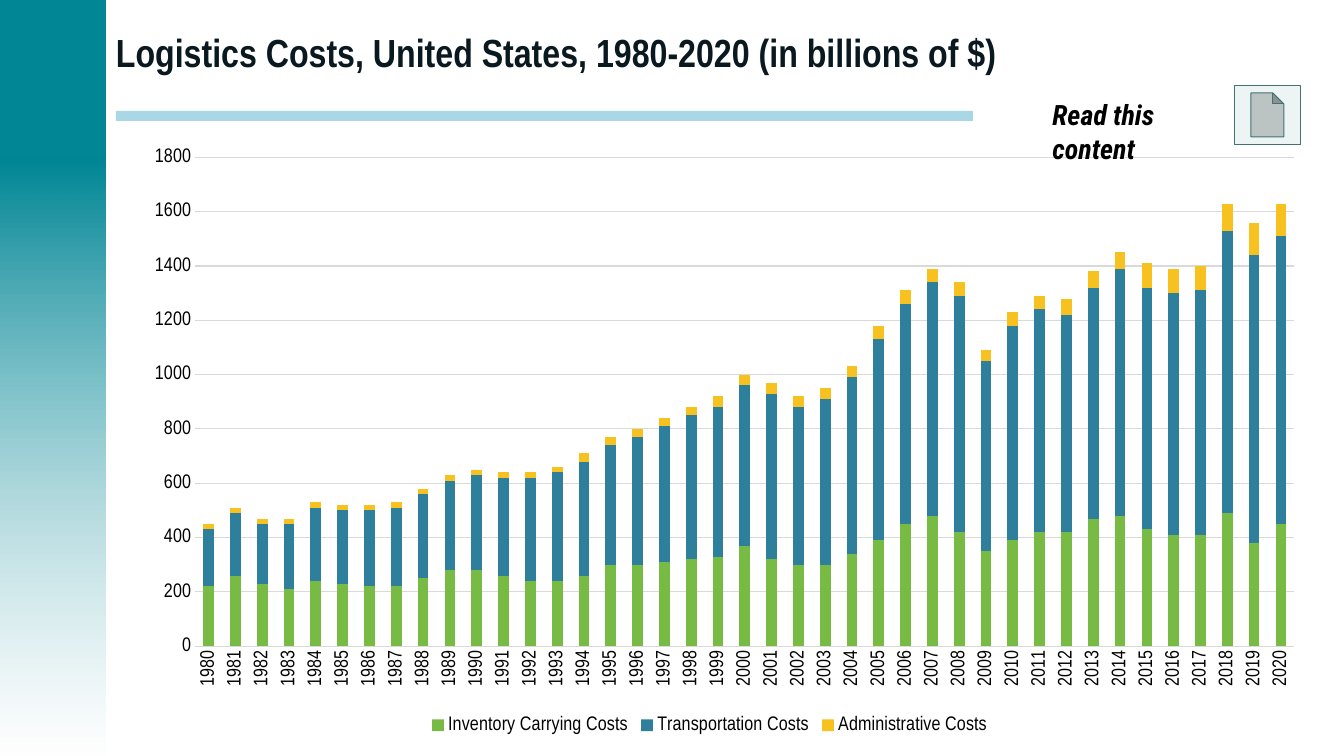
from lxml import etree
from pptx import Presentation
from pptx.chart.data import CategoryChartData as Data
from pptx.dml.color import RGBColor as Rgb
from pptx.enum.chart import XL_CHART_TYPE as Kind, XL_LEGEND_POSITION as Side, XL_TICK_MARK as Tick
from pptx.enum.shapes import MSO_SHAPE as Form
from pptx.enum.text import MSO_ANCHOR as Anchor, MSO_AUTO_SIZE as Fit, PP_ALIGN as Align
from pptx.oxml.ns import qn
from pptx.util import Inches, Pt

HUES = {
    "teal": "008695", "white": "FFFFFF", "rule": "AAD7E6", "title": "09191F",
    "black": "000000", "grid": "D9D9D9", "button": "ECF4F4", "edge": "427272",
    "stock": "78BB44", "move": "2D7F9B", "admin": "F7C120",
}
FACE = "Arial Narrow"
TITLE = "Logistics Costs, United States, 1980-2020 (in billions of $)"
NOTE = "Read this content"
YEARS = range(1980, 2021)
COSTS = [
    ("Inventory Carrying Costs", "stock", [
        220, 260, 230, 210, 240, 230, 220, 220, 250, 280, 280, 260, 240, 240,
        260, 300, 300, 310, 320, 330, 370, 320, 300, 300, 340, 390, 450, 480,
        420, 350, 390, 420, 420, 470, 480, 430, 410, 410, 490, 380, 450]),
    ("Transportation Costs", "move", [
        210, 230, 220, 240, 270, 270, 280, 290, 310, 330, 350, 360, 380, 400,
        420, 440, 470, 500, 530, 550, 590, 610, 580, 610, 650, 740, 810, 860,
        870, 700, 790, 820, 800, 850, 910, 890, 890, 900, 1040, 1060, 1060]),
    ("Administrative Costs", "admin", [
        20, 20, 20, 20, 20, 20, 20, 20, 20, 20, 20, 20, 20, 20,
        30, 30, 30, 30, 30, 40, 40, 40, 40, 40, 40, 50, 50, 50,
        50, 40, 50, 50, 60, 60, 60, 90, 90, 90, 100, 120, 120]),
]
PLOT = {"x": 0.074, "y": 0.045, "w": 0.91, "h": 0.803}


def hue(name):
    return Rgb.from_string(HUES[name])


def style(font, size, face=FACE, tint="black", bold=False, slant=False):
    font.size, font.name = Pt(size), face
    font.bold, font.italic = bold, slant
    font.color.rgb = hue(tint)


def stroke(line, tint):
    line.color.rgb = hue(tint)
    line.width = Pt(0.75)


def block(slide, box, tint, form=Form.RECTANGLE):
    shape = slide.shapes.add_shape(form, *map(Inches, box))
    shape.shadow.inherit = False
    shape.fill.solid()
    shape.fill.fore_color.rgb = hue(tint)
    shape.line.fill.background()
    return shape


def fade(shape):
    shape.fill.gradient()
    shape.fill.gradient_angle = 270
    for stop, tint, place in zip(shape.fill.gradient_stops, ("teal", "white"), (0, 1)):
        stop.color.rgb = hue(tint)
        stop.position = place
    last = list(shape.element.iter(qn("a:srgbClr")))[-1]
    etree.SubElement(last, qn("a:alpha")).set("val", "51000")


def pin(chart):
    area = chart.element.find(".//" + qn("c:plotArea"))
    old = area.find(qn("c:layout"))
    if old is not None:
        area.remove(old)
    lay = etree.Element(qn("c:layout"))
    area.insert(0, lay)
    hand = etree.SubElement(lay, qn("c:manualLayout"))
    rules = [("layoutTarget", "inner"), ("xMode", "edge"), ("yMode", "edge"), *PLOT.items()]
    for tag, val in rules:
        etree.SubElement(hand, qn("c:" + tag)).set("val", str(val))


def turn(chart):
    labels = chart.element.find(".//" + qn("c:catAx") + "/" + qn("c:txPr"))
    body = labels.find(qn("a:bodyPr"))
    body.set("rot", "-5400000")
    body.set("vert", "horz")


def draw(slide):
    data = Data()
    data.categories = [str(year) for year in YEARS]
    for name, tint, vals in COSTS:
        data.add_series(name, vals)
    box = map(Inches, (1.05, 1.29, 11.98, 6.04))
    chart = slide.shapes.add_chart(Kind.COLUMN_STACKED, *box, data).chart
    style(chart.font, 14)
    chart.has_title = False
    chart.has_legend = True
    chart.legend.position = Side.BOTTOM
    chart.legend.include_in_layout = False
    style(chart.legend.font, 14)
    plot = chart.plots[0]
    plot.gap_width, plot.overlap = 150, 100
    plot.vary_by_categories = False
    for row, (name, tint, vals) in zip(plot.series, COSTS):
        row.format.fill.solid()
        row.format.fill.fore_color.rgb = hue(tint)
    cat, val = chart.category_axis, chart.value_axis
    for axis in (cat, val):
        axis.major_tick_mark = axis.minor_tick_mark = Tick.NONE
        style(axis.tick_labels.font, 14)
    stroke(cat.format.line, "grid")
    val.format.line.fill.background()
    val.minimum_scale, val.maximum_scale, val.major_unit = 0, 1800, 200
    val.has_major_gridlines = True
    stroke(val.major_gridlines.format.line, "grid")
    pin(chart)
    turn(chart)


def main():
    deck = Presentation()
    deck.slide_width, deck.slide_height = Inches(13.33), Inches(7.5)
    slide = deck.slides.add_slide(deck.slide_layouts[5])
    block(slide, (-0.02, -0.01, 1.07, 1.58), "teal")
    fade(block(slide, (-0.02, 1.57, 1.07, 5.93), "teal"))
    block(slide, (1.15, 1.1, 8.5, 0.1), "rule")

    head = slide.shapes.title
    head.left, head.top, head.width, head.height = map(Inches, (1.05, 0.01, 11.98, 1))
    frame = head.text_frame
    frame.text = TITLE
    frame.auto_size = Fit.NONE
    frame.vertical_anchor = Anchor.MIDDLE
    frame.paragraphs[0].alignment = Align.LEFT
    style(frame.paragraphs[0].font, 28, tint="title", bold=True)

    draw(slide)
    button = block(slide, (12.24, 0.85, 0.66, 0.58), "button", Form.ACTION_BUTTON_DOCUMENT)
    stroke(button.line, "edge")
    note = slide.shapes.add_textbox(*map(Inches, (10.34, 0.92, 1.86, 0.44))).text_frame
    note.word_wrap = True
    note.text = NOTE
    style(note.paragraphs[0].font, 20, "Roboto Condensed", bold=True, slant=True)
    deck.save("out.pptx")


if __name__ == "__main__":
    main()
